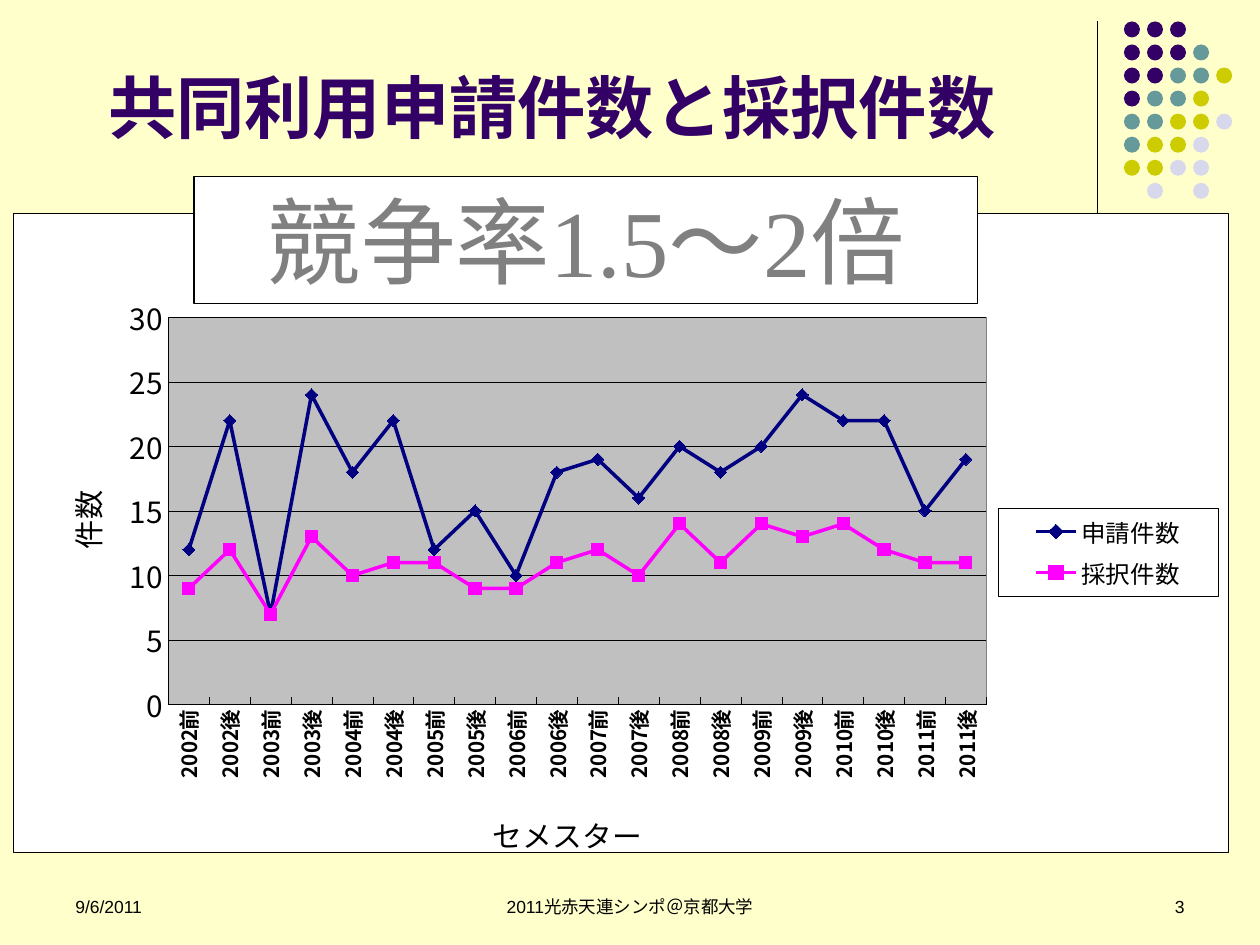
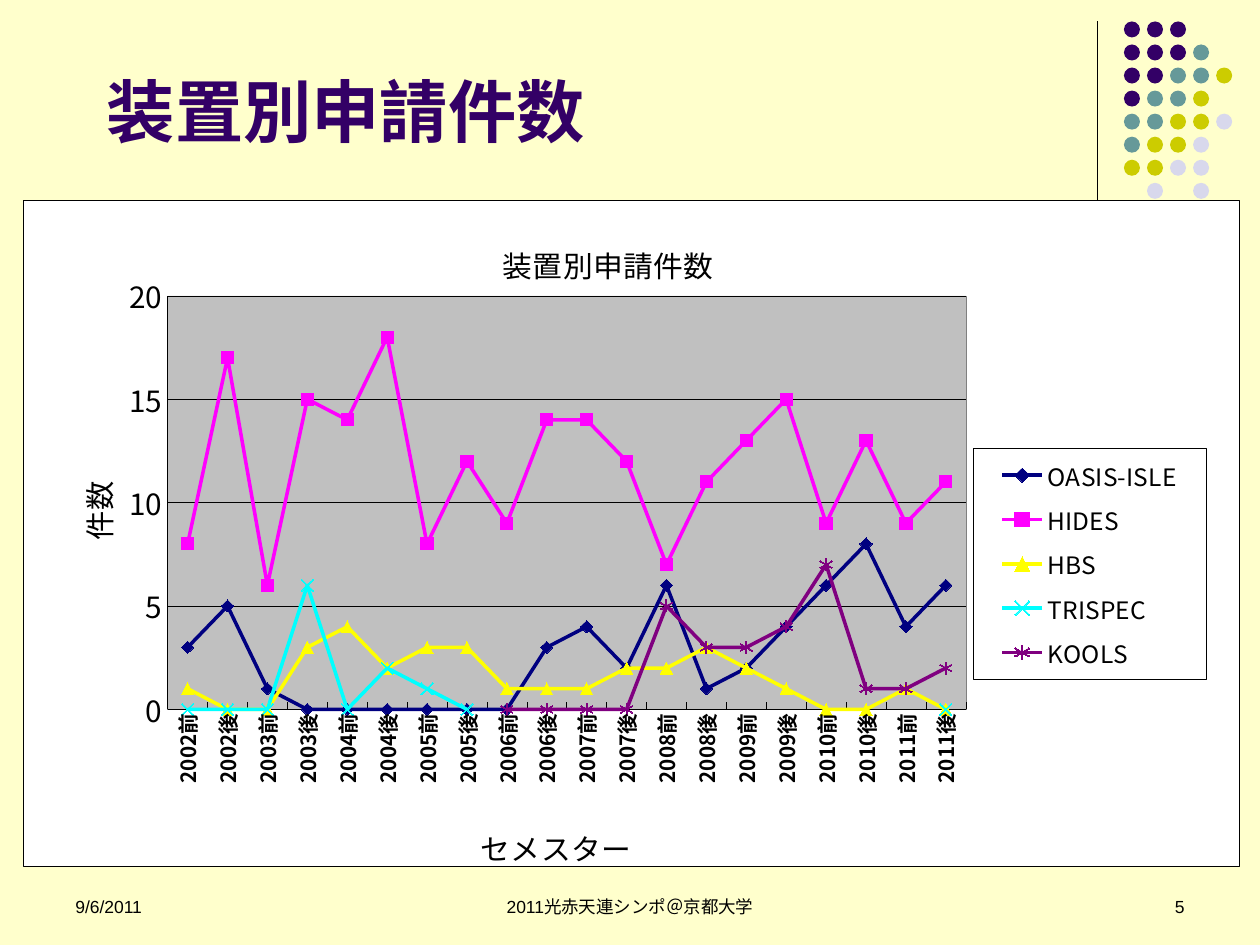
import dataclasses

import pptx
import pptx.chart.data
import pptx.dml.color
import pptx.enum.chart
import pptx.enum.shapes
import pptx.enum.text
import pptx.oxml
import pptx.oxml.ns
import pptx.util

COLUMNS, ROWS = 100, 75
ALIGN = pptx.enum.text.PP_ALIGN
ANCHOR = pptx.enum.text.MSO_ANCHOR
SHAPE = pptx.enum.shapes.MSO_SHAPE
MARKER = pptx.enum.chart.XL_MARKER_STYLE
QN = pptx.oxml.ns.qn
UPRIGHT = "-5400000"


@dataclasses.dataclass(frozen=True)
class Theme:
    """Colours, fonts and type sizes shared by the slides."""
    background: str = "FFFFCC"
    ink: str = "000000"
    paper: str = "FFFFFF"
    title: str = "330066"
    banner: str = "808080"
    plot: str = "C0C0C0"
    font: str = "Arial"
    banner_font: str = "Times New Roman"
    asian_font: str = "Noto Sans CJK JP"
    title_size: int = 39
    banner_size: int = 54
    footer_size: int = 10
    chart_size: int = 17
    legend_size: int = 14
    category_size: int = 12
    hairline: float = 0.25
    rule: float = 0.75
    series_line: int = 2
    marker_size: int = 7


THEME = Theme()
DOT_COLORS = {"P": THEME.title, "T": "669999", "Y": "CCCC00", "L": "D8D8EC"}
DOT_ROWS = ("PPP", "PPPT", "PPTTY", "PTTY", "TTYYL", "TYYL", "YYLL", " L L")
SERIES_STYLES = (
    ("000080", MARKER.DIAMOND, True),
    ("FF00FF", MARKER.SQUARE, True),
    ("FFFF00", MARKER.TRIANGLE, True),
    ("00FFFF", MARKER.X, False),
    ("800080", MARKER.STAR, False),
)
SEMESTERS = [f"{year}{half}" for year in range(2002, 2012) for half in "前後"]


@dataclasses.dataclass(frozen=True)
class Box:
    """A rectangle measured in columns and rows of the slide grid."""
    left: float
    top: float
    width: float
    height: float

    def inside(self, left, top, width, height):
        """Return a box offset from this one's corner."""
        return Box(self.left + left, self.top + top, width, height)

    def lengths(self):
        """Return left, top, width and height as slide lengths."""
        across, down = pptx.util.Inches(10) / COLUMNS, pptx.util.Inches(7.5) / ROWS
        return (round(self.left * across), round(self.top * down),
                round(self.width * across), round(self.height * down))


def color(value):
    """Turn a hex string into a colour."""
    return pptx.dml.color.RGBColor.from_string(value)


def fill_solid(fill, value):
    """Give a fill one solid colour."""
    fill.solid()
    fill.fore_color.rgb = color(value)


def set_line(line, value, width):
    """Give a line its colour and width."""
    fill_solid(line.fill, value)
    line.width = pptx.util.Pt(width)


def set_font(font, size, value=THEME.ink, name=THEME.asian_font, bold=False):
    """Set size, colour, face and weight of a font."""
    font.size, font.name, font.bold = pptx.util.Pt(size), name, bold
    font.color.rgb = color(value)


def add_asian_fonts(element):
    """Name the East Asian face beside every Latin one."""
    for latin in list(element.iter(QN("a:latin"))):
        asian = latin.makeelement(QN("a:ea"), {"typeface": THEME.asian_font})
        latin.addnext(asian)


def write_text(shape, text, align=ALIGN.LEFT, anchor=ANCHOR.MIDDLE, padding=0, **font):
    """Write one formatted paragraph into a shape."""
    frame = shape.text_frame
    frame.word_wrap = True
    frame.vertical_anchor = anchor
    frame.margin_top = frame.margin_bottom = pptx.util.Inches(padding)
    paragraph = frame.paragraphs[0]
    paragraph.alignment = align
    run = paragraph.add_run()
    run.text = text
    set_font(run.font, **font)
    add_asian_fonts(shape._element)


def add_preset(slide, preset, box, value):
    """Add a filled preset shape without outline or shadow."""
    shape = slide.shapes.add_shape(preset, *box.lengths())
    shape.shadow.inherit = False
    fill_solid(shape.fill, value)
    shape.line.fill.background()
    return shape


def add_decoration(slide, box):
    """Draw the vertical rule and the dot pattern to its right."""
    left, top, _, height = box.lengths()
    rule = slide.shapes.add_connector(
        pptx.enum.shapes.MSO_CONNECTOR.STRAIGHT, left, top, left, top + height)
    set_line(rule.line, THEME.ink, THEME.rule)
    properties = rule._element.spPr
    properties.append(properties.makeelement(QN("a:effectLst"), {}))
    gap, dot = 2.1, 1.27
    pitch = (box.width - gap) / 5
    for row, letters in enumerate(DOT_ROWS):
        for column, letter in enumerate(letters):
            if letter in DOT_COLORS:
                place = box.inside(gap + column * pitch, row * pitch, dot, dot)
                add_preset(slide, SHAPE.OVAL, place, DOT_COLORS[letter])


def add_footer(slide, box, number):
    """Write date, event and slide number along the footer."""
    side, middle = 23.3, 31.7
    parts = (
        ("9/6/2011", 0, side, ALIGN.LEFT),
        ("2011光赤天連シンポ＠京都大学", (box.width - middle) / 2, middle, ALIGN.CENTER),
        (str(number), box.width - side, side, ALIGN.RIGHT),
    )
    for text, left, width, align in parts:
        place = box.inside(left, 0, width, box.height)
        shape = slide.shapes.add_textbox(*place.lengths())
        write_text(shape, text, align, size=THEME.footer_size, name=THEME.font)


def add_title(slide, box, text):
    """Write the slide title at the bottom of its box."""
    shape = slide.shapes.add_textbox(*box.lengths())
    write_text(shape, text, anchor=ANCHOR.BOTTOM, padding=0.05, size=THEME.title_size,
               value=THEME.title, name=THEME.font, bold=True)


def add_banner(slide, box, text):
    """Draw the framed headline over the chart."""
    shape = add_preset(slide, SHAPE.RECTANGLE, box, THEME.paper)
    set_line(shape.line, THEME.ink, THEME.rule)
    write_text(shape, text, ALIGN.CENTER, size=THEME.banner_size,
               value=THEME.banner, name=THEME.banner_font)


def area_properties(fill, line):
    """Build the fill and outline of a chart area."""
    return pptx.oxml.parse_xml(
        f'<c:spPr {pptx.oxml.ns.nsdecls("c", "a")}>'
        f'<a:solidFill><a:srgbClr val="{fill}"/></a:solidFill>'
        f'<a:ln w="{pptx.util.Pt(THEME.hairline)}"><a:solidFill>'
        f'<a:srgbClr val="{line}"/></a:solidFill></a:ln></c:spPr>')


def set_layout(element, target=None, **percents):
    """Fix the place of a chart part in percent of the chart."""
    for old in element.findall(QN("c:layout")):
        element.remove(old)
    inner = f'<c:layoutTarget val="{target}"/>' if target else ""
    modes = "".join(f'<c:{key}Mode val="edge"/>' for key in "xy")
    values = "".join(f'<c:{key} val="{value / 100:.3f}"/>' for key, value in percents.items())
    layout = pptx.oxml.parse_xml(
        f'<c:layout {pptx.oxml.ns.nsdecls("c")}><c:manualLayout>'
        f'{inner}{modes}{values}</c:manualLayout></c:layout>')
    leads = [child for child in element if child.tag in (QN("c:tx"), QN("c:legendPos"))]
    element.insert(len(leads), layout)


def write_chart_title(title, text, x, y):
    """Write a chart or axis title at a fixed place."""
    paragraph = title.text_frame.paragraphs[0]
    run = paragraph.add_run()
    run.text = text
    set_font(run.font, THEME.chart_size)
    set_layout(title._element, x=x, y=y)


def turn_text(element):
    """Turn the text of a chart part to read upwards."""
    body = next(element.iter(QN("a:bodyPr")))
    body.set("rot", UPRIGHT)
    body.set("vert", "horz")


def style_axes(chart, plot, maximum):
    """Format both axes and centre their titles on the plot."""
    category, value = chart.category_axis, chart.value_axis
    for axis, size, bold in ((category, THEME.category_size, True),
                             (value, THEME.chart_size, False)):
        axis.major_tick_mark = pptx.enum.chart.XL_TICK_MARK.INSIDE
        axis.minor_tick_mark = pptx.enum.chart.XL_TICK_MARK.NONE
        set_line(axis.format.line, THEME.ink, THEME.hairline)
        set_font(axis.tick_labels.font, size, bold=bold)
    turn_text(category._element)
    value.minimum_scale, value.maximum_scale, value.major_unit = 0, maximum, 5
    value.has_major_gridlines = True
    set_line(value.major_gridlines.format.line, THEME.ink, THEME.hairline)
    write_chart_title(category.axis_title, "セメスター", plot["x"] + plot["w"] / 2 - 7.5, 92.5)
    write_chart_title(value.axis_title, "件数", 3.6, plot["y"] + plot["h"] / 2 - 4)
    turn_text(value.axis_title._element)


def style_series(chart):
    """Give each series its line and marker."""
    for series, (value, marker, filled) in zip(chart.plots[0].series, SERIES_STYLES):
        series.smooth = False
        set_line(series.format.line, value, THEME.series_line)
        series.marker.style, series.marker.size = marker, THEME.marker_size
        set_line(series.marker.format.line, value, THEME.rule)
        if filled:
            fill_solid(series.marker.format.fill, value)
        else:
            series.marker.format.fill.background()


def add_line_chart(slide, box, rows, maximum, plot, legend, title=None):
    """Draw the semester line chart with legend and titles."""
    data = pptx.chart.data.CategoryChartData()
    data.categories = SEMESTERS
    for name, values in rows.items():
        data.add_series(name, values)
    chart = slide.shapes.add_chart(
        pptx.enum.chart.XL_CHART_TYPE.LINE_MARKERS, *box.lengths(), data).chart
    set_font(chart.font, THEME.chart_size)
    chart.plots[0].vary_by_categories = False
    chart.has_title = bool(title)
    if title:
        write_chart_title(chart.chart_title, title, 39, 5)
    style_axes(chart, plot, maximum)
    style_series(chart)
    chart.has_legend = True
    chart.legend.position = pptx.enum.chart.XL_LEGEND_POSITION.RIGHT
    chart.legend.include_in_layout = False
    set_font(chart.legend.font, THEME.legend_size)
    set_layout(chart.legend._element, **legend)
    overlay = chart.legend._element.find(QN("c:overlay"))
    overlay.addnext(area_properties(THEME.paper, THEME.ink))
    space = chart._chartSpace
    area = next(space.iter(QN("c:plotArea")))
    set_layout(area, target="inner", **plot)
    area.append(area_properties(THEME.plot, THEME.banner))
    space.find(QN("c:chart")).addnext(area_properties(THEME.paper, THEME.ink))
    add_asian_fonts(space)


def add_base_slide(presentation, title, title_box, number):
    """Add a blank slide with background, decoration, title and footer."""
    slide = presentation.slides.add_slide(presentation.slide_layouts[6])
    fill_solid(slide.background.fill, THEME.background)
    add_decoration(slide, Box(87.1, 1.7, 11.25, 16.6))
    add_footer(slide, Box(5, 70.6, 90, 2.7), number)
    add_title(slide, title_box, title)
    return slide


def add_totals_slide(presentation):
    """Build the slide on requested and accepted proposals."""
    slide = add_base_slide(presentation, "共同利用申請件数と採択件数", Box(7.6, 1.5, 78, 10.7), 3)
    rows = {
        "申請件数": (12, 22, 7, 24, 18, 22, 12, 15, 10, 18, 19, 16, 20, 18, 20, 24, 22, 22, 15, 19),
        "採択件数": (9, 12, 7, 13, 10, 11, 11, 9, 9, 11, 12, 10, 14, 11, 14, 13, 14, 12, 11, 11),
    }
    add_line_chart(slide, Box(1, 16.9, 96.5, 51.8), rows, 30,
                   plot=dict(x=12.8, y=16.3, w=67.3, h=60.6),
                   legend=dict(x=81.1, y=46.1, w=18.1, h=13.8))
    add_banner(slide, Box(15.4, 14, 62.2, 10.1), "競争率1.5～2倍")


def add_instruments_slide(presentation):
    """Build the slide on proposals per instrument."""
    title = "装置別申請件数"
    slide = add_base_slide(presentation, title, Box(7.5, 2.1, 85, 10.4), 5)
    rows = {
        "OASIS-ISLE": (3, 5, 1, 0, 0, 0, 0, 0, 0, 3, 4, 2, 6, 1, 2, 4, 6, 8, 4, 6),
        "HIDES": (8, 17, 6, 15, 14, 18, 8, 12, 9, 14, 14, 12, 7, 11, 13, 15, 9, 13, 9, 11),
        "HBS": (1, 0, 0, 3, 4, 2, 3, 3, 1, 1, 1, 2, 2, 3, 2, 1, 0, 0, 1, 0),
        "TRISPEC": (0, 0, 0, 6, 0, 2, 1, 0, *[None] * 11, 0),
        "KOOLS": (*[None] * 8, 0, 0, 0, 0, 5, 3, 3, 4, 7, 1, 1, 2),
    }
    add_line_chart(slide, Box(1.8, 15.9, 96.6, 53.8), rows, 20, title=title,
                   plot=dict(x=11.9, y=14.3, w=65.6, h=62.1),
                   legend=dict(x=78.1, y=37.2, w=19.2, h=34.7))


def main():
    """Build and save the presentation."""
    presentation = pptx.Presentation()
    presentation.slide_width = pptx.util.Inches(10)
    presentation.slide_height = pptx.util.Inches(7.5)
    add_totals_slide(presentation)
    add_instruments_slide(presentation)
    presentation.save("out.pptx")


if __name__ == "__main__":
    main()
